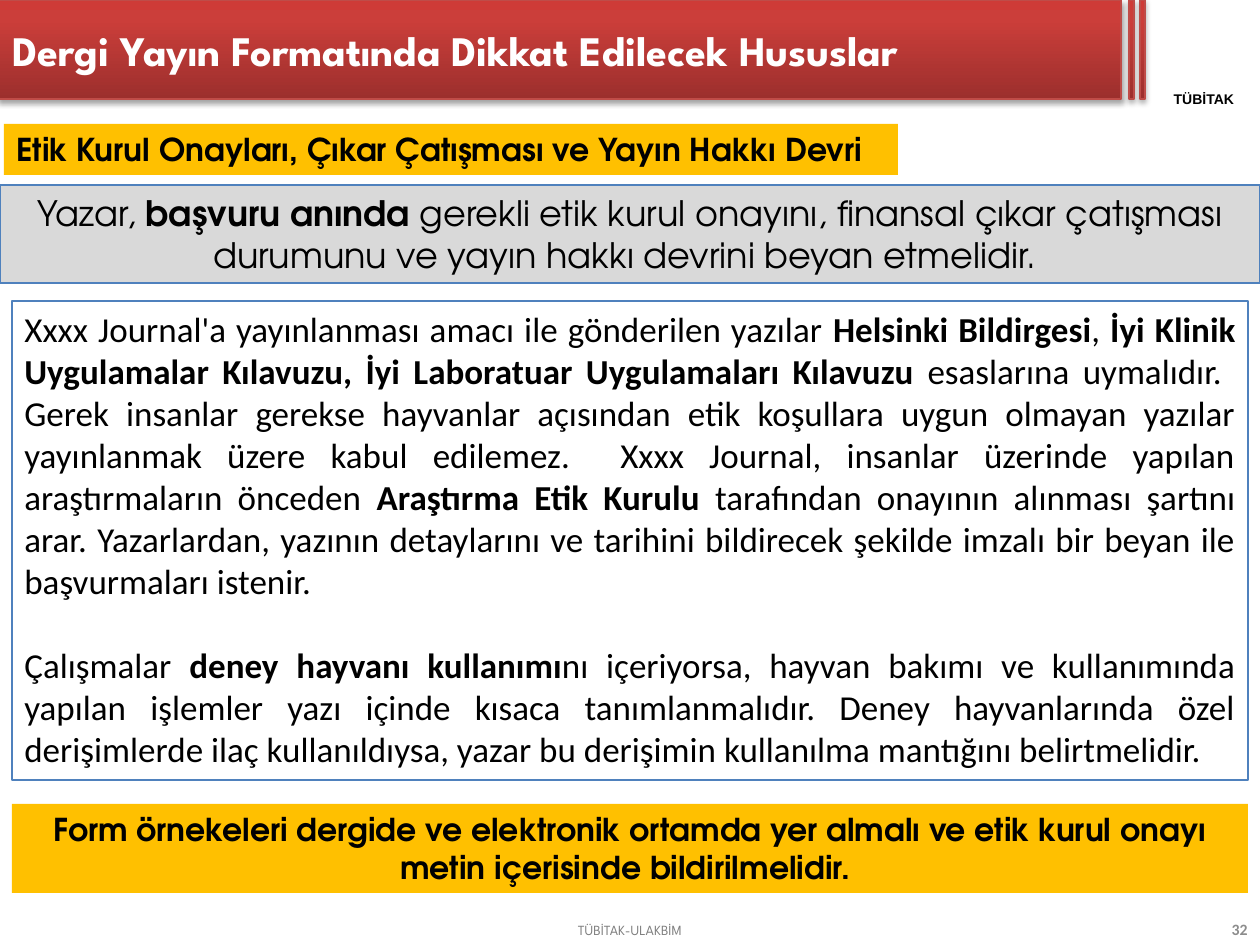
from copy import deepcopy

from lxml import etree
from pptx import Presentation
from pptx import util as u
from pptx.dml.color import RGBColor
from pptx.enum import shapes, text
from pptx.oxml.ns import qn

PX = 914400 / 126
WIDTH, HEIGHT = 1260, 945
ADVENTOR, SPARTAN = "TeX Gyre Adventor", "League Spartan"
LEFT, CENTER, RIGHT, JUSTIFY = (text.PP_ALIGN.LEFT, text.PP_ALIGN.CENTER,
                                text.PP_ALIGN.RIGHT, text.PP_ALIGN.JUSTIFY)
TOP, MIDDLE = text.MSO_ANCHOR.TOP, text.MSO_ANCHOR.MIDDLE

APPLICATION_RULE = ("Yazar, *başvuru anında *gerekli etik kurul onayını, finansal çıkar "
                    "çatışması durumunu ve yayın hakkı devrini beyan etmelidir. ")
ETHICS_RULES = [
    "Xxxx Journal'a yayınlanması amacı ile gönderilen yazılar *Helsinki Bildirgesi*, "
    "*İyi Klinik Uygulamalar Kılavuzu, İyi Laboratuar Uygulamaları Kılavuzu* esaslarına "
    "uymalıdır.  Gerek insanlar gerekse hayvanlar açısından etik koşullara uygun olmayan "
    "yazılar yayınlanmak üzere kabul edilemez.  Xxxx Journal, insanlar üzerinde yapılan "
    "araştırmaların önceden *Araştırma Etik Kurulu *tarafından onayının alınması şartını "
    "arar. Yazarlardan, yazının detaylarını ve tarihini bildirecek şekilde imzalı bir "
    "beyan ile başvurmaları istenir.",
    "Çalışmalar *deney hayvanı kullanımı*nı içeriyorsa, hayvan bakımı ve kullanımında "
    "yapılan işlemler yazı içinde kısaca tanımlanmalıdır. Deney hayvanlarında özel "
    "derişimlerde ilaç kullanıldıysa, yazar bu derişimin kullanılma mantığını "
    "belirtmelidir.",
]
FORM_RULE = ("*Form örnekeleri dergide ve elektronik ortamda yer almalı ve etik kurul "
             "onayı metin içerisinde bildirilmelidir. ")


def color(hex_code):
    """Turn a hex string into a colour."""
    return RGBColor.from_string(hex_code)


def emu(box):
    """Turn a box in px into EMU lengths."""
    return [u.Emu(round(length * PX)) for length in box]


def write(shape, paragraphs, size=18, font=ADVENTOR, ink="000000", align=LEFT,
          anchor=TOP, wrap=True, gap=0, inset=None):
    """Fill a shape with paragraphs in which asterisks switch bold on and off."""
    frame = shape.text_frame
    frame.word_wrap = wrap
    frame.vertical_anchor = anchor
    if inset is not None:
        frame.margin_left = frame.margin_right = u.Pt(inset)
        frame.margin_top = frame.margin_bottom = u.Pt(inset)
    for index, content in enumerate(paragraphs):
        paragraph = frame.add_paragraph() if index else frame.paragraphs[0]
        paragraph.alignment = align
        if index:
            paragraph.space_before = u.Pt(gap)
        for part, words in enumerate(content.split("*")):
            if words:
                run = paragraph.add_run()
                run.text = words
                run.font.size = u.Pt(size)
                run.font.name = font
                run.font.bold = part % 2 == 1
                run.font.color.rgb = color(ink)


def label(slide, box, content, **style):
    """Place a line of text without a frame."""
    write(slide.shapes.add_textbox(*emu(box)), [content], **style)


def panel(slide, box, paragraphs=(), fill=None, line=None, **style):
    """Place a rectangle with optional fill, outline and text."""
    rect = slide.shapes.add_shape(shapes.MSO_SHAPE.RECTANGLE, *emu(box))
    rect.shadow.inherit = False
    if fill:
        rect.fill.solid()
        rect.fill.fore_color.rgb = color(fill)
    else:
        rect.fill.background()
    if line:
        rect.line.color.rgb = color(line)
        rect.line.width = u.Pt(0.75)
    else:
        rect.line.fill.background()
    write(rect, paragraphs, **style)
    return rect


def red_bar(slide, box):
    """Place a red gradient bar with a soft shadow below."""
    bar = panel(slide, box, line="BF4C48")
    bar.fill.gradient()
    bar.fill.gradient_angle = 90
    stop_list = bar._element.spPr.find(".//" + qn("a:gsLst"))
    stop_list.append(deepcopy(stop_list[-1]))
    ramp = [(0, "9C2F2D"), (0.8, "CB3E3A"), (1, "CE3B37")]
    for stop, (position, shade) in zip(bar.fill.gradient_stops, ramp):
        stop.position = position
        stop.color.rgb = color(shade)
    effects = bar._element.spPr.find(qn("a:effectLst"))
    shadow = etree.SubElement(effects, qn("a:outerShdw"), blurRad="40000", dist="23000",
                              dir="5400000", rotWithShape="0")
    black = etree.SubElement(shadow, qn("a:srgbClr"), val="000000")
    etree.SubElement(black, qn("a:alpha"), val="35000")


def header(slide, left, top, width, height):
    """Build the red title banner with its two stripes and the institution name."""
    banner = 1121
    red_bar(slide, (left - 2, top, banner + 2, height))
    for stripe in (1129, 1140):
        red_bar(slide, (left + stripe, top, 5, height))
    label(slide, (left + 1140, top + 91, width - 1132, 16), "*TÜBİTAK",
          size=8, font="Arial", align=CENTER, inset=0)
    label(slide, (left, top + 1, 1106, 97),
          "*Dergi Yayın Formatında Dikkat Edilecek Hususlar",
          size=24, font=SPARTAN, ink="FFFFFF", anchor=MIDDLE)


def content(slide, left, top, width, height):
    """Build the topic heading, the rules and the closing note."""
    margin = 12
    inner = width - 2 * margin
    panel(slide, (left + 4, top, 894, 51),
          ["*Etik Kurul Onayları, Çıkar Çatışması ve Yayın Hakkı Devri"],
          fill="FFC000", wrap=False)
    panel(slide, (left, top + 61, width, 98), [APPLICATION_RULE],
          fill="D9D9D9", line="4F81BD", size=20, align=CENTER)
    panel(slide, (left + margin, top + 177, inner, 479), ETHICS_RULES,
          line="4F81BD", size=20, font="Calibri", align=JUSTIFY, gap=24)
    panel(slide, (left + margin, top + height - 89, inner, 89), [FORM_RULE],
          fill="FFC000", align=CENTER)


def footer(slide, left, top, width, height):
    """Build the centred institution line and the page number."""
    label(slide, (left, top, width, height), "TÜBİTAK-ULAKBİM",
          size=8, font=SPARTAN, ink="808080", align=CENTER, anchor=MIDDLE)
    label(slide, (left + width - 292, top, 292, height), "*32",
          size=9, font="Calibri", ink="8C8C8C", align=RIGHT, anchor=MIDDLE)


def main():
    """Build and save the slide."""
    deck = Presentation()
    deck.slide_width, deck.slide_height = emu((WIDTH, HEIGHT))
    slide = deck.slides.add_slide(deck.slide_layouts[6])
    header(slide, 0, 0, WIDTH, 99)
    footer(slide, 0, 914, WIDTH, 31)
    content(slide, 0, 124, WIDTH, 769)
    deck.save("out.pptx")


if __name__ == "__main__":
    main()
